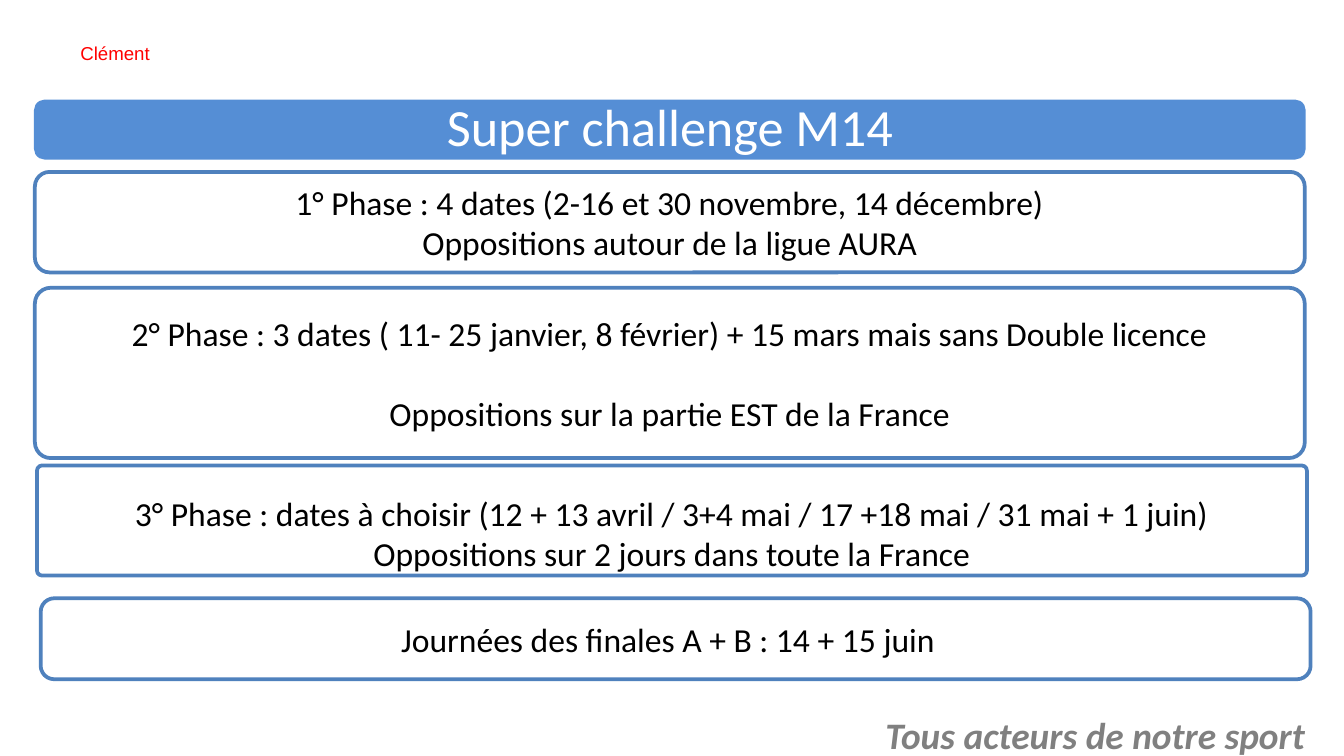
from dataclasses import dataclass

from pptx import Presentation
from pptx.dml.color import RGBColor
from pptx.enum.shapes import MSO_SHAPE
from pptx.enum.text import MSO_ANCHOR, MSO_AUTO_SIZE, PP_ALIGN
from pptx.slide import Slide
from pptx.text.text import TextFrame
from pptx.util import Cm, Pt

BLUE = "4F81BD"
BANNER = "558ED5"
WHITE = "FFFFFF"
BODY = {"name": "Calibri", "size": Pt(18)}
MARGINS = (0.25, 0.13, 0.25, 0.13)


@dataclass
class Panel:
    left: float
    top: float
    height: float
    radius: float
    lines: tuple[str, ...]
    fill: str = WHITE
    line: str = BLUE
    line_width: float = 2
    color: str = "000000"
    size: float = 18
    margins: tuple[float, ...] = MARGINS
    gap: float = 0
    para: tuple[tuple[str, object], ...] = ()


PANEL_WIDTH = 24
PANELS = [
    Panel(0.66, 1.9, 1.1, 0.17, ("Super challenge M14",), BANNER, BANNER, 1,
          WHITE, 28, (0.2,) * 4,
          para=(("line_spacing", 0.9), ("space_after", Pt(10)))),
    Panel(0.66, 3.25, 1.9, 0.146,
          ("1° Phase : 4 dates (2-16 et 30 novembre, 14 décembre)",
           "Oppositions autour de la ligue AURA")),
    Panel(0.66, 5.44, 3.22, 0.093,
          ("2° Phase : 3 dates ( 11- 25 janvier, 8 février) + 15 mars mais sans Double licence",
           "Oppositions sur la partie EST de la France"), gap=21.6),
    Panel(0.7, 8.8, 2.08, 0.046,
          ("3° Phase : dates à choisir (12 + 13 avril / 3+4 mai / 17 +18 mai / 31 mai + 1 juin)",
           "Oppositions sur 2 jours dans toute la France"),
          margins=(0.25, 0.61, 0.25, 0.13)),
    Panel(0.77, 11.31, 1.53, 0.167,
          ("Journées des finales A + B : 14 + 15 juin",),
          margins=(0.25, 0.13, 0.53, 0.13)),
]


def rgb(value: str) -> RGBColor:
    return RGBColor.from_string(value)


def apply(target: object, values: dict) -> None:
    for name, value in values.items():
        setattr(target, name, value)


def write(tf: TextFrame, lines: tuple[str, ...], color: str, font: dict,
          para: dict, margins: tuple[float, ...] = MARGINS,
          anchor: MSO_ANCHOR = MSO_ANCHOR.MIDDLE, gap: float = 0) -> None:
    sides = ("margin_left", "margin_top", "margin_right", "margin_bottom")
    apply(tf, {"word_wrap": True, "auto_size": MSO_AUTO_SIZE.NONE,
               "vertical_anchor": anchor,
               **{side: Cm(value) for side, value in zip(sides, margins)}})
    for i, text in enumerate(lines):
        p = tf.add_paragraph() if i else tf.paragraphs[0]
        apply(p, para)
        if i and gap:
            p.space_before = Pt(gap)
        r = p.add_run()
        r.text = text
        apply(r.font, font)
        r.font.color.rgb = rgb(color)


def draw_panel(s: Slide, panel: Panel) -> None:
    sp = s.shapes.add_shape(MSO_SHAPE.ROUNDED_RECTANGLE, Cm(panel.left),
                            Cm(panel.top), Cm(PANEL_WIDTH), Cm(panel.height))
    sp.adjustments[0] = panel.radius
    sp.shadow.inherit = False
    sp.fill.solid()
    sp.fill.fore_color.rgb = rgb(panel.fill)
    sp.line.color.rgb = rgb(panel.line)
    sp.line.width = Pt(panel.line_width)
    write(sp.text_frame, panel.lines, panel.color,
          {**BODY, "size": Pt(panel.size)},
          {"alignment": PP_ALIGN.CENTER, **dict(panel.para)},
          panel.margins, gap=panel.gap)


def draw_title(s: Slide) -> None:
    sp = s.shapes.title
    apply(sp, {"left": Cm(1.27), "top": Cm(0.58),
               "width": Cm(22.86), "height": Cm(0.86)})
    write(sp.text_frame, ("Clément",), "FF0000",
          {"name": "Arial", "size": Pt(10)}, {"alignment": PP_ALIGN.LEFT})


def draw_motto(s: Slide) -> None:
    sp = s.shapes.add_textbox(Cm(16.3), Cm(13.34), Cm(8.8), Cm(0.94))
    write(sp.text_frame, ("Tous acteurs de notre sport",), "808080",
          {**BODY, "size": Pt(20), "bold": True, "italic": True},
          {"alignment": PP_ALIGN.CENTER}, anchor=MSO_ANCHOR.TOP)


def main() -> None:
    prs = Presentation()
    apply(prs, {"slide_width": Cm(25.4), "slide_height": Cm(14.29)})
    s = prs.slides.add_slide(prs.slide_layouts[5])
    draw_title(s)
    for panel in PANELS:
        draw_panel(s, panel)
    draw_motto(s)
    prs.save("out.pptx")


if __name__ == "__main__":
    main()
